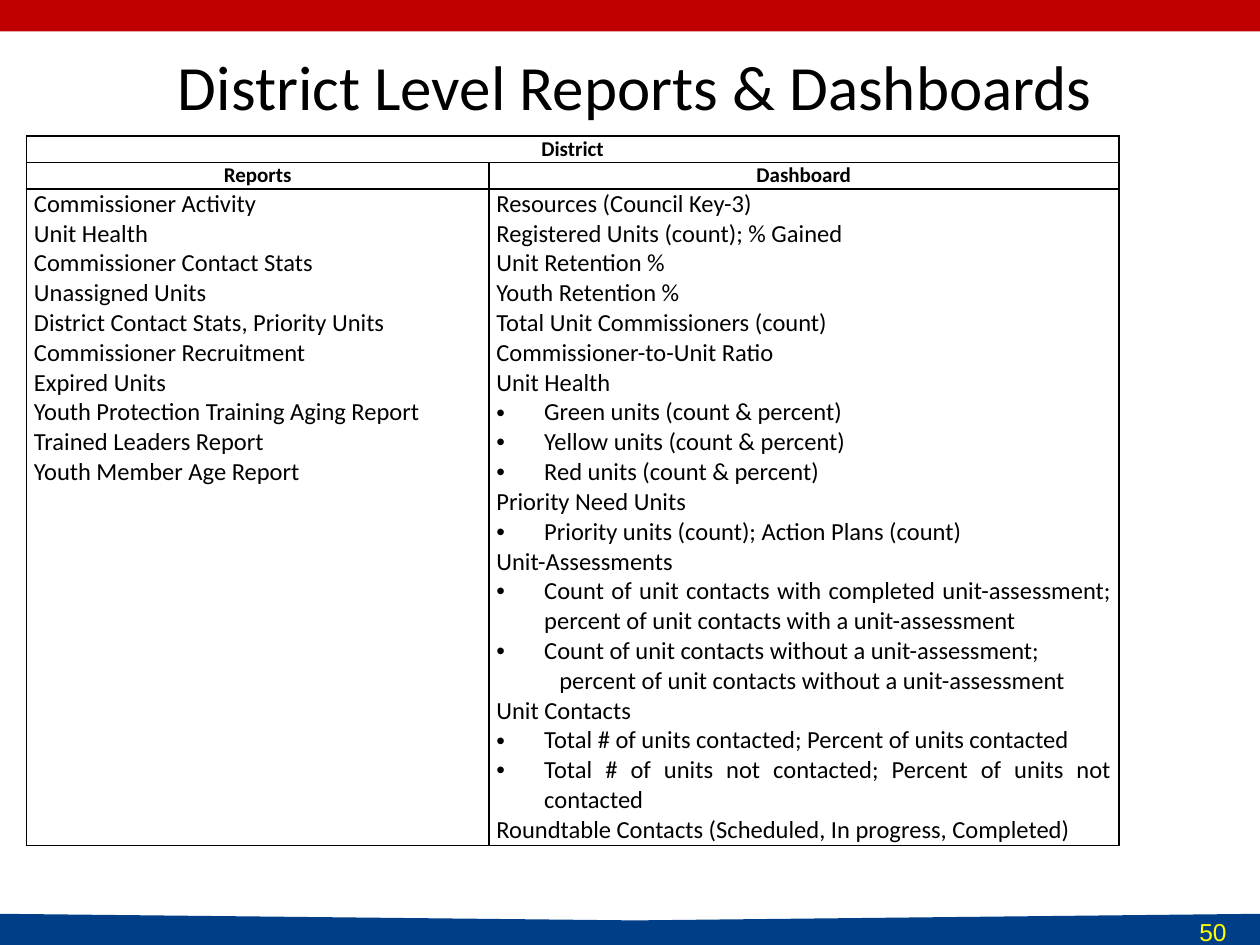
from dataclasses import dataclass

from lxml import etree
from pptx import Presentation
from pptx.dml.color import RGBColor
from pptx.enum.shapes import MSO_SHAPE
from pptx.enum.text import MSO_ANCHOR, PP_ALIGN
from pptx.oxml.ns import qn
from pptx.util import Inches, Pt

RECTANGLE = MSO_SHAPE.RECTANGLE
LEFT, CENTER, JUSTIFY = PP_ALIGN.LEFT, PP_ALIGN.CENTER, PP_ALIGN.JUSTIFY
TOP, MIDDLE = MSO_ANCHOR.TOP, MSO_ANCHOR.MIDDLE
WIDTH, HEIGHT = Inches(10), Inches(7.5)


@dataclass(frozen=True)
class Theme:
    red: str = "C00000"
    blue: str = "003F87"
    black: str = "000000"
    yellow: str = "FFFF00"
    body_font: str = "Calibri"
    number_font: str = "Arial"
    title_size: int = 36
    body_size: int = 14
    header_size: int = 12
    border_width: int = 1


THEME = Theme()


@dataclass(frozen=True)
class Area:
    """A rectangle given in shares of the slide's width and height."""
    left: float
    top: float
    width: float
    height: float

    def lengths(self) -> tuple[int, int, int, int]:
        return (int(self.left * WIDTH), int(self.top * HEIGHT),
                int(self.width * WIDTH), int(self.height * HEIGHT))


@dataclass(frozen=True)
class Style:
    size: int
    color: str = THEME.black
    font: str = THEME.body_font
    bold: bool = False
    align: PP_ALIGN = LEFT


@dataclass(frozen=True)
class Line:
    text: str
    indent: float = 0
    bullet: bool = False


def item(text: str) -> Line:
    return Line(text, indent=0.38, bullet=True)


TITLE = Style(THEME.title_size, align=CENTER)
NUMBER = Style(THEME.body_size, THEME.yellow, THEME.number_font)
HEADER = Style(THEME.header_size, bold=True, align=CENTER)
BODY = Style(THEME.body_size, align=JUSTIFY)

TOP_BAND = Area(0, 0, 1, 1 / 30)
TITLE_AREA = Area(0.029, 0.02, 0.95, 0.14)
NUMBER_AREA = Area(0.942, 0.964, 0.058, 0.05)
TABLE_AREA = Area(0.021, 0.144, 0.867, 0.75)
FOOTER_OUTLINE = [(0, 0.967), (0.504, 0.974), (1, 0.967), (1, 1), (0, 1)]
COLUMN_WIDTHS = [3.67, 5]
ROW_HEIGHTS = [0.21, 0.21, 5.21]

REPORTS = [Line(text) for text in (
    "Commissioner Activity",
    "Unit Health",
    "Commissioner Contact Stats",
    "Unassigned Units",
    "District Contact Stats, Priority Units",
    "Commissioner Recruitment",
    "Expired Units",
    "Youth Protection Training Aging Report",
    "Trained Leaders Report",
    "Youth Member Age Report",
)]
DASHBOARD = [
    Line("Resources (Council Key-3)"),
    Line("Registered Units (count); % Gained"),
    Line("Unit Retention %"),
    Line("Youth Retention %"),
    Line("Total Unit Commissioners (count)"),
    Line("Commissioner-to-Unit Ratio"),
    Line("Unit Health"),
    item("Green units (count & percent)"),
    item("Yellow units (count & percent)"),
    item("Red units (count & percent)"),
    Line("Priority Need Units"),
    item("Priority units (count); Action Plans (count)"),
    Line("Unit-Assessments"),
    item("Count of unit contacts with completed unit-assessment; "
         "percent of unit contacts with a unit-assessment"),
    item("Count of unit contacts without a unit-assessment;"),
    Line("percent of unit contacts without a unit-assessment", indent=0.5),
    Line("Unit Contacts"),
    item("Total # of units contacted; Percent of units contacted"),
    item("Total # of units not contacted; Percent of units not contacted"),
    Line("Roundtable Contacts (Scheduled, In progress, Completed)"),
]


def set_all(target, values: dict) -> None:
    for name, value in values.items():
        setattr(target, name, value)


def write(frame, lines: list[Line], style: Style) -> None:
    for index, line in enumerate(lines):
        para = frame.add_paragraph() if index else frame.paragraphs[0]
        para.alignment = style.align
        if line.indent:
            properties = para._p.get_or_add_pPr()
            properties.set("marL", str(Inches(line.indent)))
            properties.set("indent", str(-Inches(line.indent) if line.bullet else 0))
            if line.bullet:
                face = etree.SubElement(properties, qn("a:buFont"))
                face.set("typeface", THEME.number_font)
                etree.SubElement(properties, qn("a:buChar")).set("char", "•")
        span = para.add_run()
        span.text = line.text
        set_all(span.font, {"name": style.font, "size": Pt(style.size), "bold": style.bold})
        span.font.color.rgb = RGBColor.from_string(style.color)


def add_text(page, area: Area, text: str, style: Style, anchor: MSO_ANCHOR) -> None:
    frame = page.shapes.add_textbox(*area.lengths()).text_frame
    set_all(frame, {"word_wrap": True, "vertical_anchor": anchor})
    write(frame, [Line(text)], style)


def paint(shape, color: str) -> None:
    shape.shadow.inherit = False
    shape.fill.solid()
    shape.fill.fore_color.rgb = RGBColor.from_string(color)
    shape.line.fill.background()


def add_bands(page) -> None:
    paint(page.shapes.add_shape(RECTANGLE, *TOP_BAND.lengths()), THEME.red)
    points = [(int(x * WIDTH), int(y * HEIGHT)) for x, y in FOOTER_OUTLINE]
    builder = page.shapes.build_freeform(*points[0])
    builder.add_line_segments(points[1:], close=True)
    paint(builder.convert_to_shape(), THEME.blue)


def format_cell(cell) -> None:
    """Give a cell narrow margins, black borders and no fill."""
    set_all(cell, {"margin_left": Inches(0.06), "margin_right": Inches(0.06),
                   "margin_top": 0, "margin_bottom": 0})
    properties = cell._tc.get_or_add_tcPr()
    for side in ("lnL", "lnR", "lnT", "lnB"):
        border = etree.SubElement(properties, qn(f"a:{side}"))
        border.set("w", str(Pt(THEME.border_width)))
        fill = etree.SubElement(border, qn("a:solidFill"))
        etree.SubElement(fill, qn("a:srgbClr")).set("val", THEME.black)
    cell.fill.background()


def add_district_table(page) -> None:
    table = page.shapes.add_table(
        len(ROW_HEIGHTS), len(COLUMN_WIDTHS), *TABLE_AREA.lengths()).table
    set_all(table, {"first_row": False, "horz_banding": False})
    for column, width in zip(table.columns, COLUMN_WIDTHS):
        column.width = Inches(width)
    for row, height in zip(table.rows, ROW_HEIGHTS):
        row.height = Inches(height)
    for cell in table.iter_cells():
        format_cell(cell)
    table.cell(0, 0).merge(table.cell(0, 1))
    write(table.cell(0, 0).text_frame, [Line("District")], HEADER)
    columns = [("Reports", REPORTS), ("Dashboard", DASHBOARD)]
    for index, (heading, lines) in enumerate(columns):
        write(table.cell(1, index).text_frame, [Line(heading)], HEADER)
        write(table.cell(2, index).text_frame, lines, BODY)


def main() -> None:
    deck = Presentation()
    set_all(deck, {"slide_width": WIDTH, "slide_height": HEIGHT})
    page = deck.slides.add_slide(deck.slide_layouts[6])
    add_bands(page)
    add_text(page, TITLE_AREA, "District Level Reports & Dashboards", TITLE, MIDDLE)
    add_text(page, NUMBER_AREA, "50", NUMBER, TOP)
    add_district_table(page)
    deck.save("out.pptx")


if __name__ == "__main__":
    main()
